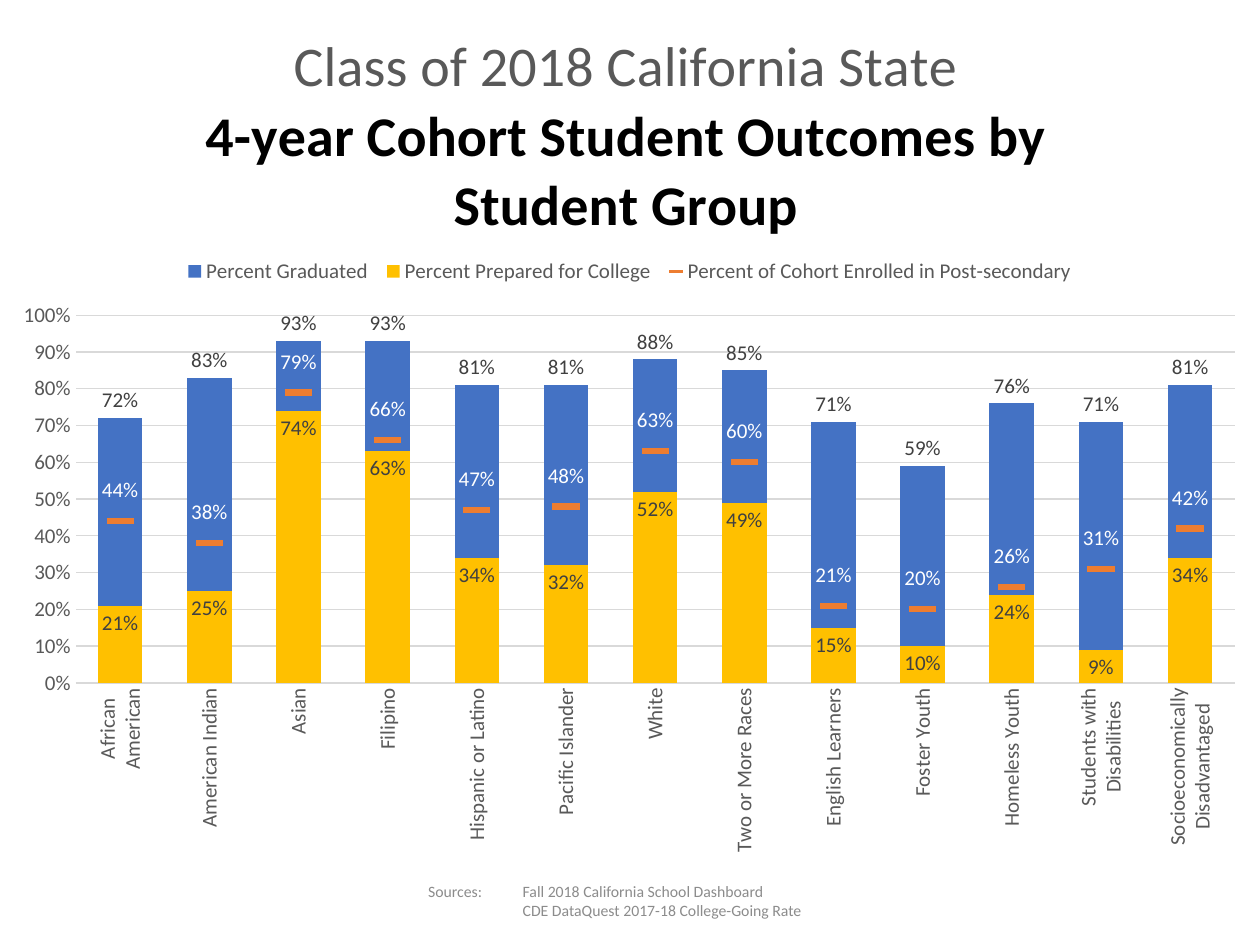
from lxml import etree
from pptx import Presentation, util as u
from pptx.chart.data import CategoryChartData
from pptx.dml.color import RGBColor
from pptx.enum import chart as ch, text
from pptx.oxml import parse_xml
from pptx.oxml.ns import qn

WIDTH, HEIGHT = u.Inches(10), u.Inches(7.5)
FONT = "Calibri"
COLORS = {
    "graduated": "4472C4", "prepared": "FFC000", "enrolled": "ED7D31",
    "axis": "595959", "grid": "D9D9D9", "label": "404040",
    "white": "FFFFFF", "black": "000000", "source": "8C8C8C",
}
TITLE = (("Class of 2018 California State", "axis", False),
         ("4-year Cohort Student Outcomes by Student Group", "black", True))
SOURCES = ("Sources:\tFall 2018 California School Dashboard",
           "\tCDE DataQuest 2017-18 College-Going Rate")
SERIES = ("Percent Graduated", "Percent Prepared for College",
          "Percent of Cohort Enrolled in Post-secondary")
GROUPS = (
    ("African\nAmerican", 0.72, 0.21, 0.44),
    ("American Indian", 0.83, 0.25, 0.38),
    ("Asian", 0.93, 0.74, 0.79),
    ("Filipino", 0.93, 0.63, 0.66),
    ("Hispanic or Latino", 0.81, 0.34, 0.47),
    ("Pacific Islander", 0.81, 0.32, 0.48),
    ("White", 0.88, 0.52, 0.63),
    ("Two or More Races", 0.85, 0.49, 0.60),
    ("English Learners", 0.71, 0.15, 0.21),
    ("Foster Youth", 0.59, 0.10, 0.20),
    ("Homeless Youth", 0.76, 0.24, 0.26),
    ("Students with\nDisabilities", 0.71, 0.09, 0.31),
    ("Socioeconomically\nDisadvantaged", 0.81, 0.34, 0.42),
)
CHART_NS = "http://schemas.openxmlformats.org/drawingml/2006/chart"


def rgb(name):
    return RGBColor.from_string(COLORS[name])


def style_font(font, size, color, bold=False):
    font.name, font.size, font.bold = FONT, u.Pt(size), bold
    font.color.rgb = rgb(color)


def set_layout(element, after, inner=False, **shares):
    """Fix a chart part's place, as shares of the chart's size."""
    for old in element.findall(qn("c:layout")):
        element.remove(old)
    layout = etree.Element(qn("c:layout"))
    manual = etree.SubElement(layout, qn("c:manualLayout"))
    if inner:
        etree.SubElement(manual, qn("c:layoutTarget")).set("val", "inner")
    for key in ("x", "y"):
        etree.SubElement(manual, qn(f"c:{key}Mode")).set("val", "edge")
    for key, share in shares.items():
        etree.SubElement(manual, qn(f"c:{key}")).set("val", str(share))
    previous = element.find(qn(after)) if after else None
    if previous is None:
        element.insert(0, layout)
    else:
        previous.addnext(layout)


def move_last_series_to_line(chart):
    bars = chart.plots[0]._element
    line = parse_xml(
        f'<c:lineChart xmlns:c="{CHART_NS}"><c:grouping val="standard"/>'
        '<c:varyColors val="0"/><c:marker val="1"/></c:lineChart>')
    series = bars.findall(qn("c:ser"))[-1]
    for bar_only in series.findall(qn("c:invertIfNegative")):
        series.remove(bar_only)
    line.insert(2, series)
    for axis in bars.findall(qn("c:axId")):
        etree.SubElement(line, qn("c:axId")).set("val", axis.get("val"))
    bars.addnext(line)


def style_title(chart):
    frame = chart.chart_title.text_frame
    for index, (words, color, bold) in enumerate(TITLE):
        paragraph = frame.paragraphs[0] if index == 0 else frame.add_paragraph()
        paragraph.alignment = text.PP_ALIGN.CENTER
        run = paragraph.add_run()
        run.text = words
        style_font(run.font, 32, color, bold)
    chart.chart_title.include_in_layout = False
    set_layout(chart.chart_title._element, "c:tx", x=0.16, y=0.03)


def style_axes(chart):
    for axis in (chart.category_axis, chart.value_axis):
        axis.major_tick_mark = axis.minor_tick_mark = ch.XL_TICK_MARK.NONE
        style_font(axis.tick_labels.font, 12, "axis")
    values = chart.value_axis
    values.minimum_scale, values.maximum_scale, values.major_unit = 0, 1, 0.1
    values.tick_labels.number_format = "0%"
    values.tick_labels.number_format_is_linked = False
    values.format.line.fill.background()
    for line in (values.major_gridlines.format.line,
                 chart.category_axis.format.line):
        line.color.rgb, line.width = rgb("grid"), u.Pt(0.75)
    body = chart.category_axis._element.find(qn("c:txPr")).find(qn("a:bodyPr"))
    body.set("rot", "-5400000")
    body.set("vert", "horz")


def style_series(chart):
    bars, line = chart.plots
    bars.gap_width = bars.overlap = 100
    bars.vary_by_categories = False
    graduated, prepared = bars.series
    enrolled = line.series[0]
    for series, color in ((graduated, "graduated"), (prepared, "prepared")):
        series.format.fill.solid()
        series.format.fill.fore_color.rgb = rgb(color)
    enrolled.smooth = False
    enrolled.format.line.fill.background()
    marker = enrolled.marker
    marker.style, marker.size = ch.XL_MARKER_STYLE.DASH, 15
    marker.format.fill.solid()
    marker.format.fill.fore_color.rgb = rgb("enrolled")
    marker.format.line.fill.background()
    position = ch.XL_LABEL_POSITION
    for series, place, color in ((graduated, position.OUTSIDE_END, "label"),
                                 (prepared, position.INSIDE_END, "label"),
                                 (enrolled, position.ABOVE, "white")):
        labels = series.data_labels
        labels.show_value, labels.position = True, place
        labels.number_format, labels.number_format_is_linked = "0%", False
        style_font(labels.font, 12, color)


def add_outcomes_chart(slide, left, top, width, height):
    data = CategoryChartData(number_format="0%")
    names, *columns = zip(*GROUPS)
    data.categories = names
    for name, values in zip(SERIES, columns):
        data.add_series(name, values)
    chart = slide.shapes.add_chart(ch.XL_CHART_TYPE.COLUMN_CLUSTERED,
                                   left, top, width, height, data).chart
    style_font(chart.font, 12, "black")
    move_last_series_to_line(chart)
    style_title(chart)
    style_axes(chart)
    style_series(chart)
    chart.has_legend = True
    chart.legend.position = ch.XL_LEGEND_POSITION.TOP
    chart.legend.include_in_layout = False
    style_font(chart.legend.font, 12, "axis")
    set_layout(chart.legend._element, "c:legendPos",
               x=0.14, y=0.29, w=0.72, h=0.04)
    plot_area = chart._chartSpace.chart.plotArea
    set_layout(plot_area, None, inner=True, x=0.06, y=0.36, w=0.92, h=0.42)


def add_sources(slide, left, top, width, height):
    frame = slide.shapes.add_textbox(left, top, width, height).text_frame
    frame.word_wrap = True
    frame.vertical_anchor = text.MSO_ANCHOR.MIDDLE
    for index, words in enumerate(SOURCES):
        paragraph = frame.paragraphs[0] if index == 0 else frame.add_paragraph()
        paragraph.text = words
        tabs = etree.SubElement(paragraph._p.get_or_add_pPr(), qn("a:tabLst"))
        etree.SubElement(tabs, qn("a:tab"), pos=str(u.Inches(0.75)), algn="l")
        style_font(paragraph.font, 9, "source")


def main():
    presentation = Presentation()
    presentation.slide_width, presentation.slide_height = WIDTH, HEIGHT
    slide = presentation.slides.add_slide(presentation.slide_layouts[6])
    chart_height = u.Inches(6.95)
    add_sources(slide, int(WIDTH * 0.33), chart_height,
                int(WIDTH * 0.34), u.Inches(0.4))
    add_outcomes_chart(slide, 0, 0, WIDTH, chart_height)
    presentation.save("out.pptx")


if __name__ == "__main__":
    main()
